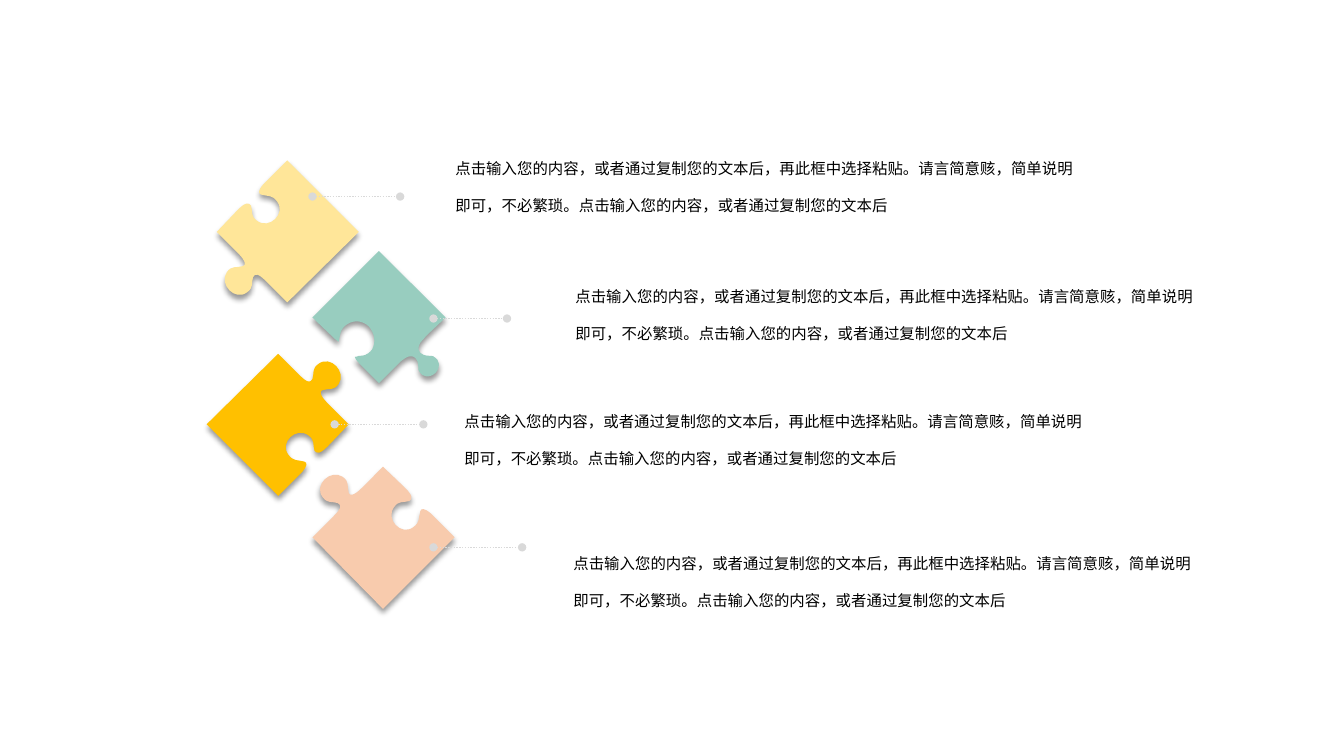
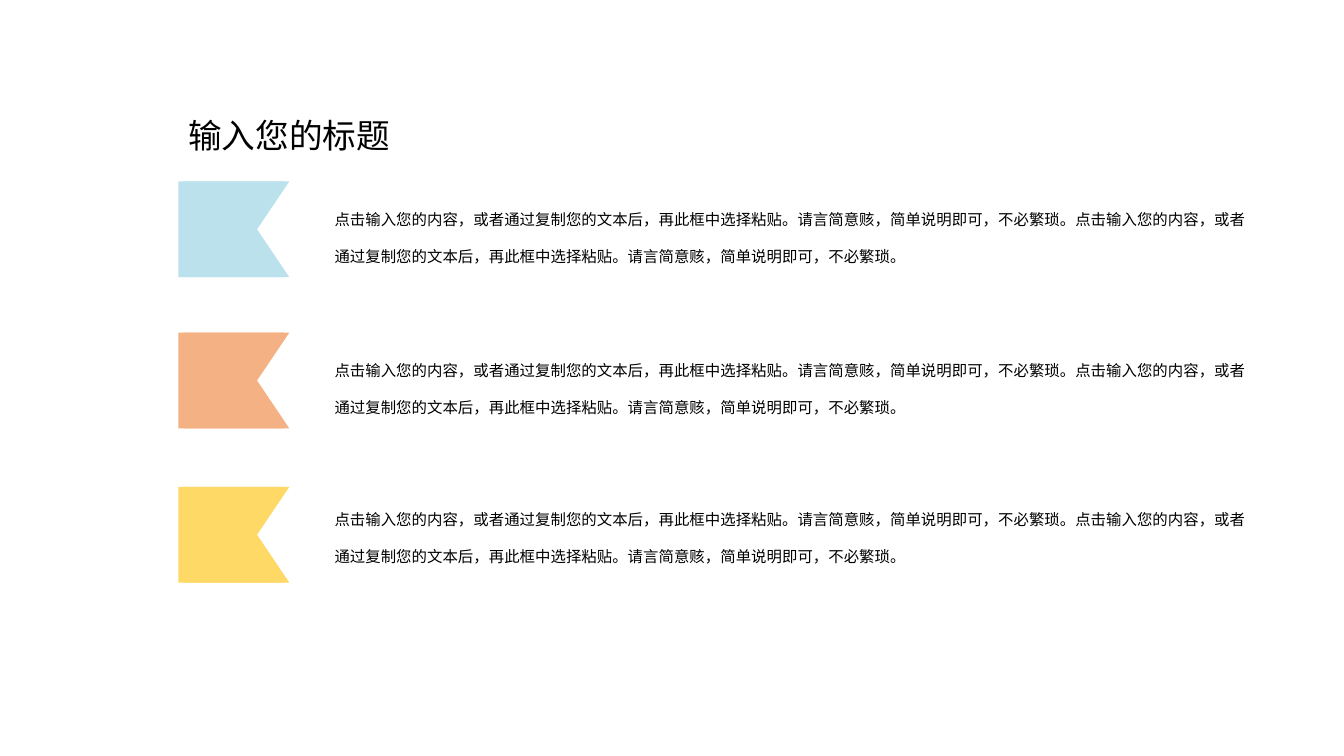
from dataclasses import dataclass

from lxml.etree import SubElement
from pptx import Presentation
from pptx.dml.color import RGBColor
from pptx.enum.dml import MSO_LINE
from pptx.enum.shapes import MSO_CONNECTOR
from pptx.enum.text import MSO_AUTO_SIZE, PP_ALIGN
from pptx.oxml.ns import qn
from pptx.util import Inches, Pt


@dataclass(frozen=True)
class Theme:
    font: str = "Noto Sans CJK JP"
    ink: str = "000000"
    rule: str = "D9D9D9"
    cream: str = "FFE699"
    teal: str = "98CDBF"
    gold: str = "FFC000"
    peach: str = "F8CBAD"
    sky: str = "BBE2EC"
    orange: str = "F4B183"
    yellow: str = "FFD966"
    title: int = 24
    body: int = 11


THEME = Theme()

TITLE = "输入您的标题"
ASK = "点击输入您的内容，或者通过复制您的文本后"
REST = "，再此框中选择粘贴。请言简意赅，简单说明即可，不必繁琐。"
SHORT = ASK + REST + ASK
LONG = (ASK + REST) * 2

# Outlines in hundredths of an inch: two numbers make a line, six a curve.
KNOB = [
    (101, 81), (108, 86, 105, 90, 107, 96), (109, 99, 112, 100, 120, 92),
    (141, 70), (120, 49), (112, 41, 112, 37, 115, 36),
    (122, 34, 126, 37, 131, 30), (139, 18, 123, 1, 111, 10),
    (104, 15, 107, 19, 105, 25), (103, 29, 100, 29, 92, 21),
    (71, 0), (0, 70), (71, 141), (95, 117),
    (100, 111, 100, 108, 97, 107), (90, 105, 86, 107, 81, 100),
    (72, 88, 89, 72, 101, 81),
]
HOOK = [
    (47, 112), (43, 108, 42, 106, 42, 105), (43, 105, 45, 105, 46, 104),
    (50, 104, 54, 104, 59, 98), (63, 91, 62, 82, 56, 75),
    (50, 69, 41, 68, 34, 73), (28, 77, 28, 81, 27, 85),
    (27, 87, 27, 88, 26, 90), (26, 90, 24, 89, 22, 87),
    (0, 66), (66, 0), (132, 66), (113, 84),
    (110, 88, 107, 90, 106, 93), (104, 97, 106, 100, 107, 101),
    (108, 102, 109, 102, 110, 103), (112, 104, 115, 104, 117, 104),
    (119, 104, 120, 104, 122, 106), (123, 107, 123, 107, 124, 108),
    (127, 113, 125, 118, 122, 121), (119, 124, 114, 126, 109, 123),
    (108, 122, 108, 122, 107, 121), (105, 119, 105, 118, 105, 116),
    (105, 114, 105, 111, 104, 109), (103, 108, 103, 107, 102, 106),
    (96, 101, 88, 109, 85, 112), (66, 131),
]
FLAG = [(0, 0), (105, 0), (73, 47.5), (105, 95), (0, 95)]
FLAG_LEFTS = (1.82, 1.77)

# outline, turn, colour, piece corner, line start, line length, text corner
PIECES = [
    (KNOB, 180, THEME.cream, (2.15, 1.59), (3.1, 1.95), 0.87, (4.42, 1.35)),
    (HOOK, 0, THEME.teal, (3.1, 2.49), (4.3, 3.16), 0.73, (5.61, 2.62)),
    (KNOB, 0, THEME.gold, (2.05, 3.51), (3.32, 4.21), 0.88, (4.51, 3.86)),
    (KNOB, 270, THEME.peach, (3.1, 4.63), (4.3, 5.43), 0.88, (5.59, 5.26)),
]
# colour, flag top, text top
ROWS = [
    (THEME.sky, 1.8, 1.85),
    (THEME.orange, 3.3, 3.35),
    (THEME.yellow, 4.83, 4.83),
]


def bend(shape, outline):
    """Turn the six-number parts of a freeform into cubic curves."""
    lines = list(shape._element.iter(qn("a:lnTo")))
    for line, part in zip(lines, outline[1:]):
        if len(part) == 6:
            line.clear()
            line.tag = qn("a:cubicBezTo")
            for x, y in zip(part[::2], part[1::2]):
                SubElement(line, qn("a:pt"), x=str(Inches(x / 100)),
                           y=str(Inches(y / 100)))


def add_free(slide, outline, left, top, color):
    ends = [(Inches(left + part[-2] / 100), Inches(top + part[-1] / 100))
            for part in outline]
    pen = slide.shapes.build_freeform(*ends[0])
    pen.add_line_segments(ends[1:], close=True)
    shape = pen.convert_to_shape()
    bend(shape, outline)
    shape.shadow.inherit = False
    shape.fill.solid()
    shape.fill.fore_color.rgb = RGBColor.from_string(color)
    shape.line.fill.background()
    return shape


def add_shade(shape):
    """Drop a soft black shadow straight down."""
    effects = shape._element.spPr.find(qn("a:effectLst"))
    shade = SubElement(effects, qn("a:outerShdw"), blurRad=str(Pt(4)),
                       dist=str(Pt(3)), dir="5400000", algn="t",
                       rotWithShape="0")
    black = SubElement(shade, qn("a:srgbClr"), val=THEME.ink)
    SubElement(black, qn("a:alpha"), val="40000")


def add_rule(slide, left, top, width):
    """Draw a dotted line with a round dot at each end."""
    y = Inches(top)
    rule = slide.shapes.add_connector(
        MSO_CONNECTOR.STRAIGHT, Inches(left), y, Inches(left + width), y)
    rule.line.color.rgb = RGBColor.from_string(THEME.rule)
    rule.line.width = Pt(1)
    rule.line.dash_style = MSO_LINE.ROUND_DOT
    props = rule._element.spPr
    for end in ("a:headEnd", "a:tailEnd"):
        SubElement(props.find(qn("a:ln")), qn(end), type="oval")
    SubElement(props, qn("a:effectLst"))


def add_text(slide, text, box, size, align=PP_ALIGN.LEFT):
    frame = slide.shapes.add_textbox(*map(Inches, box)).text_frame
    frame.word_wrap = True
    frame.auto_size = MSO_AUTO_SIZE.SHAPE_TO_FIT_TEXT
    frame.text = text
    para = frame.paragraphs[0]
    para.alignment = align
    para.line_spacing = 2.0
    font = para.runs[0].font
    font.name = THEME.font
    font.size = Pt(size)
    font.color.rgb = RGBColor.from_string(THEME.ink)
    SubElement(font._element, qn("a:ea"), typeface=THEME.font)


def draw_puzzle(slide):
    for outline, turn, color, corner, start, width, place in PIECES:
        piece = add_free(slide, outline, *corner, color)
        piece.rotation = turn
        add_shade(piece)
        add_rule(slide, *start, width)
        add_text(slide, SHORT, (*place, 6.47, 0.79), THEME.body)


def draw_flags(slide):
    add_text(slide, TITLE, (1.77, 0.69, 2.28, 0.8), THEME.title,
             PP_ALIGN.JUSTIFY)
    for color, top, place in ROWS:
        for left in FLAG_LEFTS:
            add_free(slide, FLAG, left, top, color)
        add_text(slide, LONG, (3.22, place, 9.28, 1.16), THEME.body)


def main():
    deck = Presentation()
    deck.slide_width = Inches(40 / 3)
    deck.slide_height = Inches(7.5)
    for draw in (draw_puzzle, draw_flags):
        draw(deck.slides.add_slide(deck.slide_layouts[6]))
    deck.save("out.pptx")


if __name__ == "__main__":
    main()
